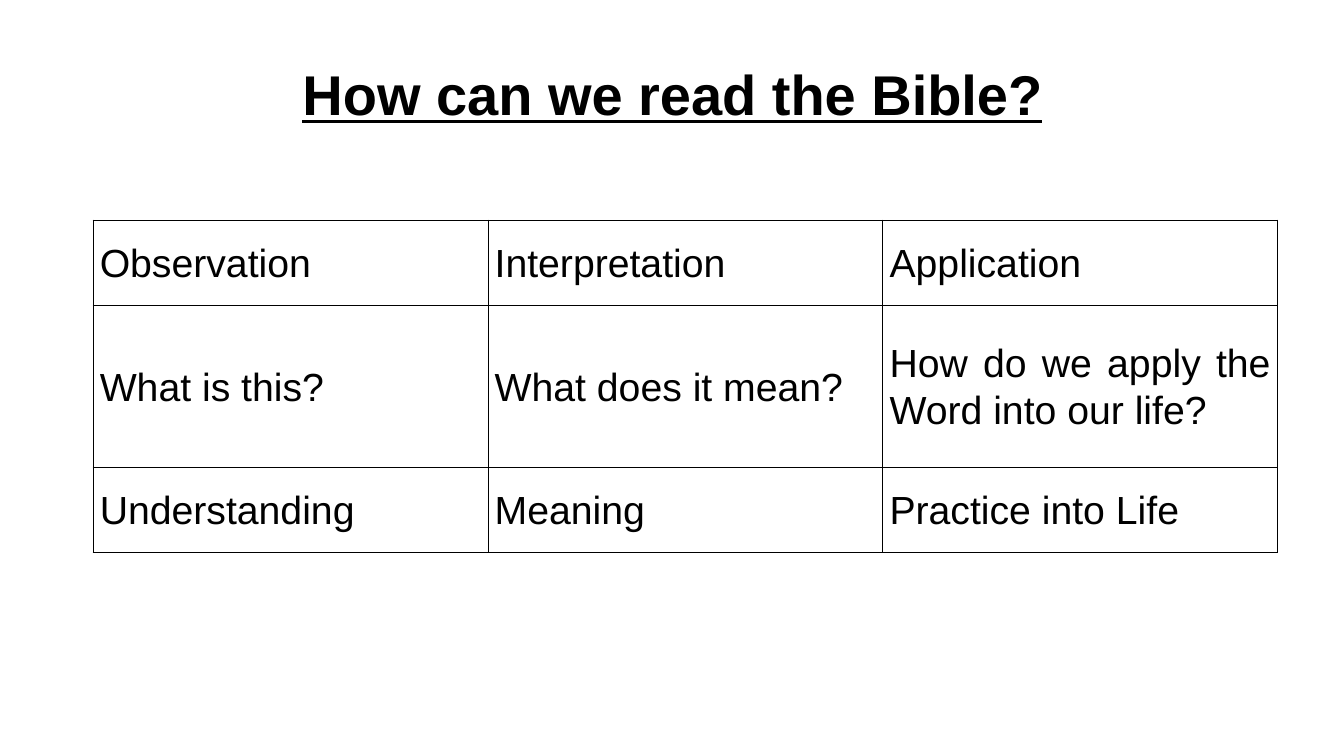
from lxml import etree
from pptx import Presentation
from pptx import util as u
from pptx.dml.color import RGBColor
from pptx.enum import text
from pptx.oxml import ns

BLACK = "000000"
ROWS = [
    ["Observation", "Interpretation", "Application"],
    ["What is this?", "What does it mean?", "How do we apply the Word into our life?"],
    ["Understanding", "Meaning", "Practice into Life"],
]
ROW_HEIGHTS = [0.85, 1.6, 0.85]


def colour(value):
    return RGBColor.from_string(value)


def write(frame, words, size, align, bold=False, underline=False, spacing=None, after=None):
    frame.word_wrap = True
    frame.vertical_anchor = text.MSO_ANCHOR.MIDDLE
    para = frame.paragraphs[0]
    para.alignment = align
    para.line_spacing = spacing
    para.space_after = after
    span = para.add_run()
    span.text = words
    span.font.name = "Arial"
    span.font.size = u.Pt(size)
    span.font.bold = bold
    span.font.underline = underline
    span.font.color.rgb = colour(BLACK)


def outline(cell, line_colour, points):
    properties = cell._tc.get_or_add_tcPr()
    for side in ("L", "R", "T", "B"):
        line = etree.SubElement(properties, ns.qn(f"a:ln{side}"), w=str(u.Pt(points)))
        fill = etree.SubElement(line, ns.qn("a:solidFill"))
        etree.SubElement(fill, ns.qn("a:srgbClr"), val=line_colour)


def add_title(page, left, top, width, height):
    title = page.shapes.title
    title.left, title.top = u.Inches(left), u.Inches(top)
    title.width, title.height = u.Inches(width), u.Inches(height)
    write(title.text_frame, "How can we read the Bible?", 40, text.PP_ALIGN.CENTER,
          bold=True, underline=True)


def add_steps_table(page, left, top, width):
    frame = page.shapes.add_table(len(ROWS), len(ROWS[0]), u.Inches(left), u.Inches(top),
                                  u.Inches(width), u.Inches(sum(ROW_HEIGHTS)))
    table = frame.table
    table.first_row = table.horz_banding = False
    for row, height, entries in zip(table.rows, ROW_HEIGHTS, ROWS):
        row.height = u.Inches(height)
        for cell, words in zip(row.cells, entries):
            cell.margin_left = cell.margin_right = u.Inches(0.07)
            cell.margin_top = cell.margin_bottom = u.Inches(0.02)
            cell.vertical_anchor = text.MSO_ANCHOR.MIDDLE
            outline(cell, BLACK, 0.25)
            cell.fill.background()
            write(cell.text_frame, words, 28, text.PP_ALIGN.JUSTIFY,
                  spacing=1.07, after=u.Pt(8))


def main():
    deck = Presentation()
    deck.slide_width, deck.slide_height = u.Inches(13.33), u.Inches(7.5)
    page = deck.slides.add_slide(deck.slide_layouts[5])
    add_title(page, 0.67, 0.3, 12, 1.25)
    add_steps_table(page, 0.92, 2.18, 11.75)
    deck.save("out.pptx")


if __name__ == "__main__":
    main()
